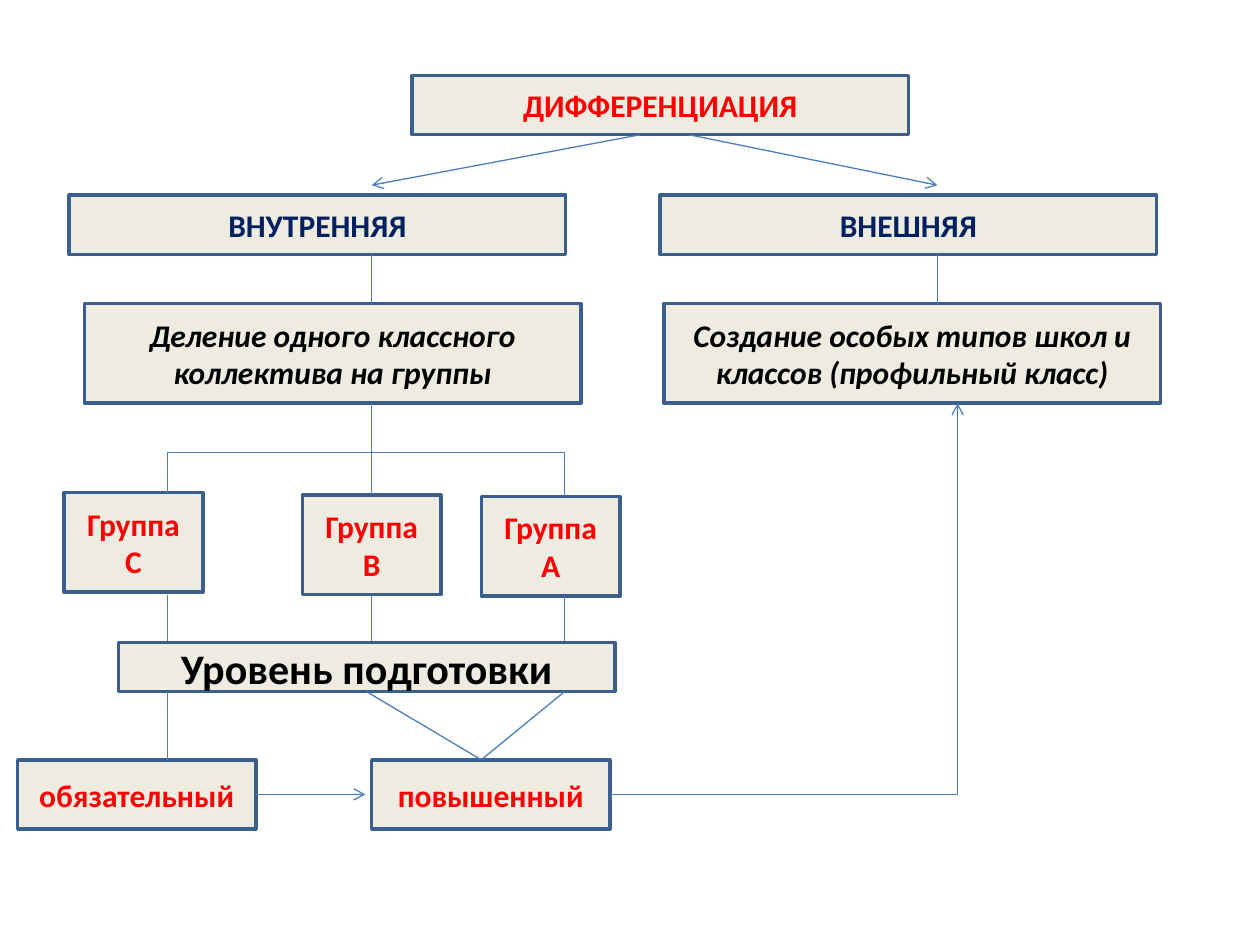
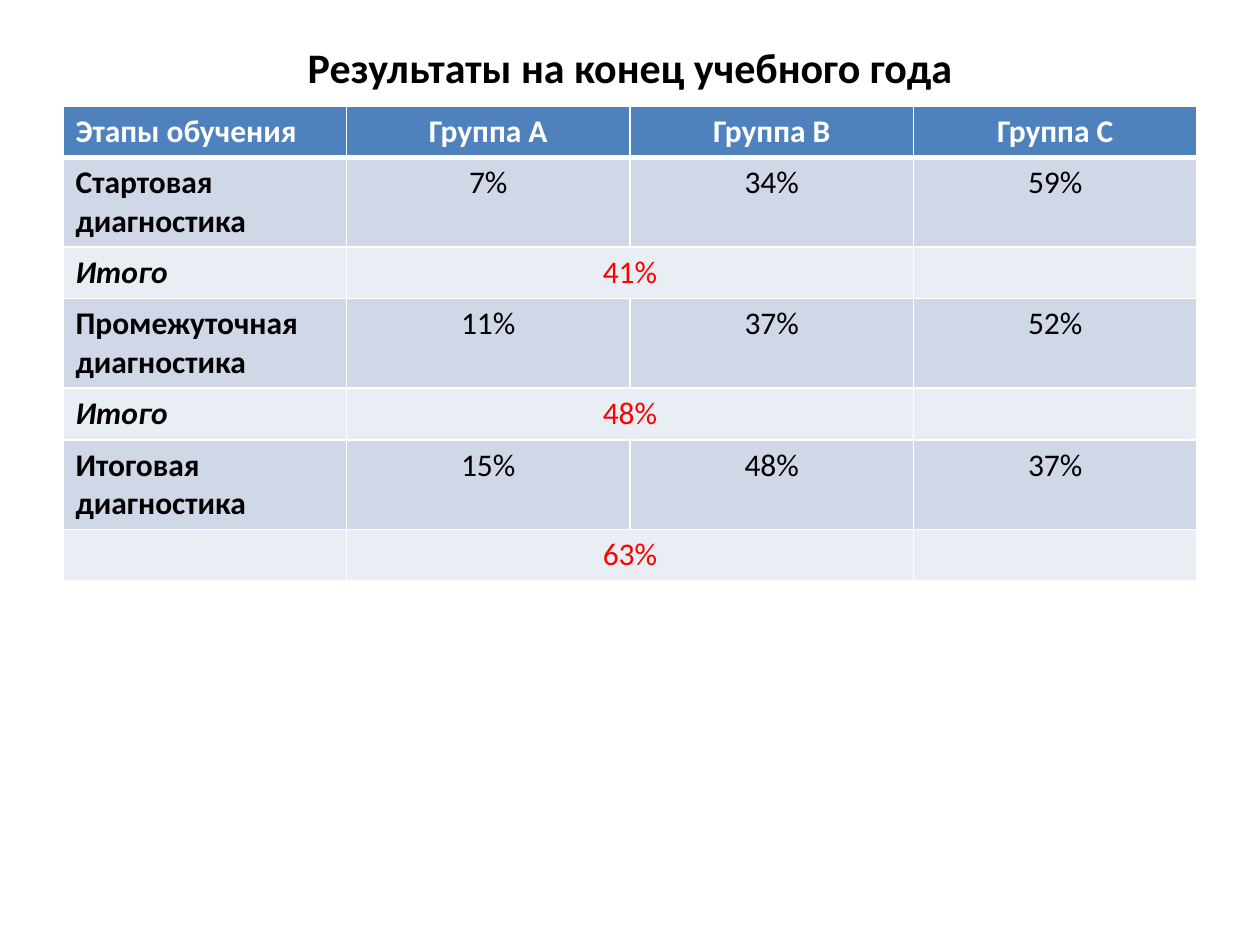
from dataclasses import dataclass

from lxml.etree import SubElement
from pptx import Presentation
from pptx.dml.color import RGBColor
from pptx.enum.shapes import MSO_CONNECTOR, MSO_SHAPE
from pptx.enum.text import MSO_ANCHOR, PP_ALIGN
from pptx.oxml.ns import qn
from pptx.util import Inches, Pt

COLUMNS, ROWS = 100, 75
TOP, BOTTOM, RIGHT = 0, 2, 3


@dataclass(frozen=True)
class Theme:
    """Colours, font and type sizes shared by the slides."""
    font: str = "Calibri"
    body: int = 18
    title: int = 24
    black: str = "000000"
    white: str = "FFFFFF"
    red: str = "FF0000"
    navy: str = "002060"
    box_fill: str = "EEECE1"
    box_line: str = "3A5F8C"
    link: str = "4B7EBC"
    header: str = "4F81BD"
    band_dark: str = "D0D8E8"
    band_light: str = "E9EDF4"


THEME = Theme()
SLIDE_W, SLIDE_H = Inches(10), Inches(7.5)


@dataclass(frozen=True)
class Box:
    """A region measured in columns and rows of the slide grid."""
    x: float
    y: float
    w: float
    h: float

    def point(self, dx, dy):
        """Return the slide position of an offset inside the region."""
        return (round((self.x + dx) * SLIDE_W / COLUMNS),
                round((self.y + dy) * SLIDE_H / ROWS))

    def frame(self):
        """Return left, top, width and height in slide units."""
        return (*self.point(0, 0), round(self.w * SLIDE_W / COLUMNS),
                round(self.h * SLIDE_H / ROWS))

    def inner(self, dx, dy, w, h):
        """Return a box placed relative to this one."""
        return Box(self.x + dx, self.y + dy, w, h)


def rgb(value):
    """Turn a hex string into a colour."""
    return RGBColor.from_string(value)


def write(p, text, color, size=THEME.body, bold=True, italic=False,
          align=PP_ALIGN.CENTER):
    """Add one formatted run to a paragraph."""
    p.alignment = align
    r = p.add_run()
    r.text = text
    r.font.name, r.font.size = THEME.font, Pt(size)
    r.font.bold, r.font.italic = bold, italic
    r.font.color.rgb = rgb(color)


def add_box(s, box, *lines, color=THEME.red, **style):
    """Add a framed rectangle with one paragraph per line."""
    sp = s.shapes.add_shape(MSO_SHAPE.RECTANGLE, *box.frame())
    sp.shadow.inherit = False
    sp.fill.solid()
    sp.fill.fore_color.rgb = rgb(THEME.box_fill)
    sp.line.color.rgb = rgb(THEME.box_line)
    sp.line.width = Pt(2)
    tf = sp.text_frame
    tf.word_wrap = True
    tf.vertical_anchor = MSO_ANCHOR.MIDDLE
    for i, line in enumerate(lines):
        p = tf.add_paragraph() if i else tf.paragraphs[0]
        write(p, line, color, **style)
    return sp


def add_link(s, box, start, end, arrow=False, begin=None, finish=None):
    """Draw a line between two offsets, joined to sides where given."""
    cn = s.shapes.add_connector(MSO_CONNECTOR.STRAIGHT,
                                *box.point(*start), *box.point(*end))
    if begin:
        cn.begin_connect(*begin)
    if finish:
        cn.end_connect(*finish)
    cn.line.color.rgb = rgb(THEME.link)
    cn.line.width = Pt(0.75)
    sp_pr = cn._element.spPr
    if arrow:
        SubElement(sp_pr.find(qn("a:ln")), qn("a:tailEnd"), type="arrow")
    SubElement(sp_pr, qn("a:effectLst"))


def draw_root(s, box):
    """Draw the top concept and its two arrows."""
    add_box(s, box, "ДИФФЕРЕНЦИАЦИЯ")
    for start, end in ((18.1, -3.2), (22, 41.7)):
        add_link(s, box, (start, box.h), (end, box.h + 4), arrow=True)


def draw_branch(s, box, name, description, shift, trunk):
    """Draw a kind of differentiation above its description."""
    head, body = 4.7, 7.9
    add_box(s, box.inner(0, 0, box.w, head), name, color=THEME.navy)
    add_box(s, box.inner(shift, box.h - body, box.w, body), description,
            color=THEME.black, italic=True)
    add_link(s, box, (trunk, head), (trunk, box.h - body))


def draw_groups(s, box, trunks):
    """Draw the three groups hanging from a shared bar."""
    w, h, bar = 11, 7.9, 3.9
    groups = ((0, 7.1, ("Группа", "С")), (18.9, 7.3, ("Группа В",)),
              (33.1, 7.4, ("Группа А",)))
    middle = trunks[1]
    add_link(s, box, (trunks[0], bar), (trunks[2], bar))
    for trunk, (x, y, lines) in zip(trunks, groups):
        sp = add_box(s, box.inner(x, y, w, h), *lines)
        central = trunk == middle
        add_link(s, box, (trunk, 0 if central else bar), (trunk, y),
                 finish=(sp, TOP) if central else None)
        add_link(s, box, (trunk, max(y + h, 15.2)), (trunk, box.h),
                 begin=(sp, BOTTOM) if central else None)


def draw_levels(s, box, trunks):
    """Draw the training level bar and the two levels below it."""
    bar, low, w, h = 3.9, 9.3, 18.9, 5.5
    level = add_box(s, box.inner(8, 0, 39.4, bar), "Уровень подготовки",
                    color=THEME.black, size=THEME.title)
    basic = add_box(s, box.inner(0, low, w, h), "обязательный")
    advanced = add_box(s, box.inner(28.1, low, w, h), "повышенный")
    mid, meet, corner = low + h / 2, 36.8, 74.6
    add_link(s, box, (trunks[0], bar), (trunks[0], low))
    add_link(s, box, (27.7, bar), (meet, low), begin=(level, BOTTOM))
    add_link(s, box, (trunks[2], bar), (meet, low))
    add_link(s, box, (w, mid), (27.6, mid), arrow=True, begin=(basic, RIGHT))
    add_link(s, box, (47, mid), (corner, mid), begin=(advanced, RIGHT))
    add_link(s, box, (corner, mid), (corner, -19), arrow=True)


def build_scheme(prs):
    """Build the slide with the differentiation scheme."""
    s = prs.slides.add_slide(prs.slide_layouts[6])
    trunks = (13.3, 29.5, 44.8)
    draw_root(s, Box(32.7, 6, 39.4, 4.7))
    draw_branch(s, Box(5.5, 15.5, 39.4, 16.5), "ВНУТРЕННЯЯ",
                "Деление одного классного коллектива на группы", 1.2, 24)
    draw_branch(s, Box(52.4, 15.5, 39.4, 16.5), "ВНЕШНЯЯ",
                "Создание особых типов школ и классов (профильный класс)",
                0.3, 22)
    for draw, box in ((draw_groups, Box(5.1, 32, 44.1, 19)),
                      (draw_levels, Box(1.4, 51, 47, 14.8))):
        draw(s, box, [trunk - box.x for trunk in trunks])


def style_cell(cell, fill, top=1, bottom=1):
    """Give a cell white borders and a solid fill."""
    tc_pr = cell._tc.get_or_add_tcPr()
    for side, width in (("L", 1), ("R", 1), ("T", top), ("B", bottom)):
        ln = SubElement(tc_pr, qn(f"a:ln{side}"), w=str(Pt(width)))
        SubElement(SubElement(ln, qn("a:solidFill")), qn("a:srgbClr"),
                   val=THEME.white)
    cell.fill.solid()
    cell.fill.fore_color.rgb = rgb(fill)


def draw_results(s, box, rows):
    """Draw the results table, merging the totals of groups А and В."""
    table = s.shapes.add_table(len(rows), len(rows[0]), *box.frame()).table
    for i, row in enumerate(rows):
        header, total = i == 0, i > 0 and i % 2 == 0
        if total:
            table.cell(i, 1).merge(table.cell(i, 2))
        fill = (THEME.header if header else
                THEME.band_light if total else THEME.band_dark)
        for j, text in enumerate(row):
            cell = table.cell(i, j)
            style_cell(cell, fill, 3 if i == 1 else 1, 3 if header else 1)
            if not text:
                continue
            color = (THEME.white if header else
                     THEME.red if total and j else THEME.black)
            write(cell.text_frame.paragraphs[0], text, color,
                  bold=header or j == 0, italic=total and j == 0,
                  align=PP_ALIGN.CENTER if j else PP_ALIGN.LEFT)


def draw_title(s, box, text):
    """Place and fill the title placeholder."""
    sp = s.shapes.title
    sp.left, sp.top, sp.width, sp.height = box.frame()
    tf = sp.text_frame
    tf.vertical_anchor = MSO_ANCHOR.MIDDLE
    write(tf.paragraphs[0], text, THEME.black, size=THEME.title)


def build_results(prs):
    """Build the slide with the results of the school year."""
    s = prs.slides.add_slide(prs.slide_layouts[5])
    draw_title(s, Box(5, 3, 90, 4.6), "Результаты на конец учебного года")
    draw_results(s, Box(5, 8.4, 90, 28.7), (
        ("Этапы обучения", "Группа А", "Группа В", "Группа С"),
        ("Стартовая диагностика", "7%", "34%", "59%"),
        ("Итого", "41%", "", ""),
        ("Промежуточная диагностика", "11%", "37%", "52%"),
        ("Итого", "48%", "", ""),
        ("Итоговая диагностика", "15%", "48%", "37%"),
        ("", "63%", "", ""),
    ))


def main():
    """Build and save the presentation."""
    prs = Presentation()
    prs.slide_width, prs.slide_height = SLIDE_W, SLIDE_H
    build_scheme(prs)
    build_results(prs)
    prs.save("out.pptx")


if __name__ == "__main__":
    main()
